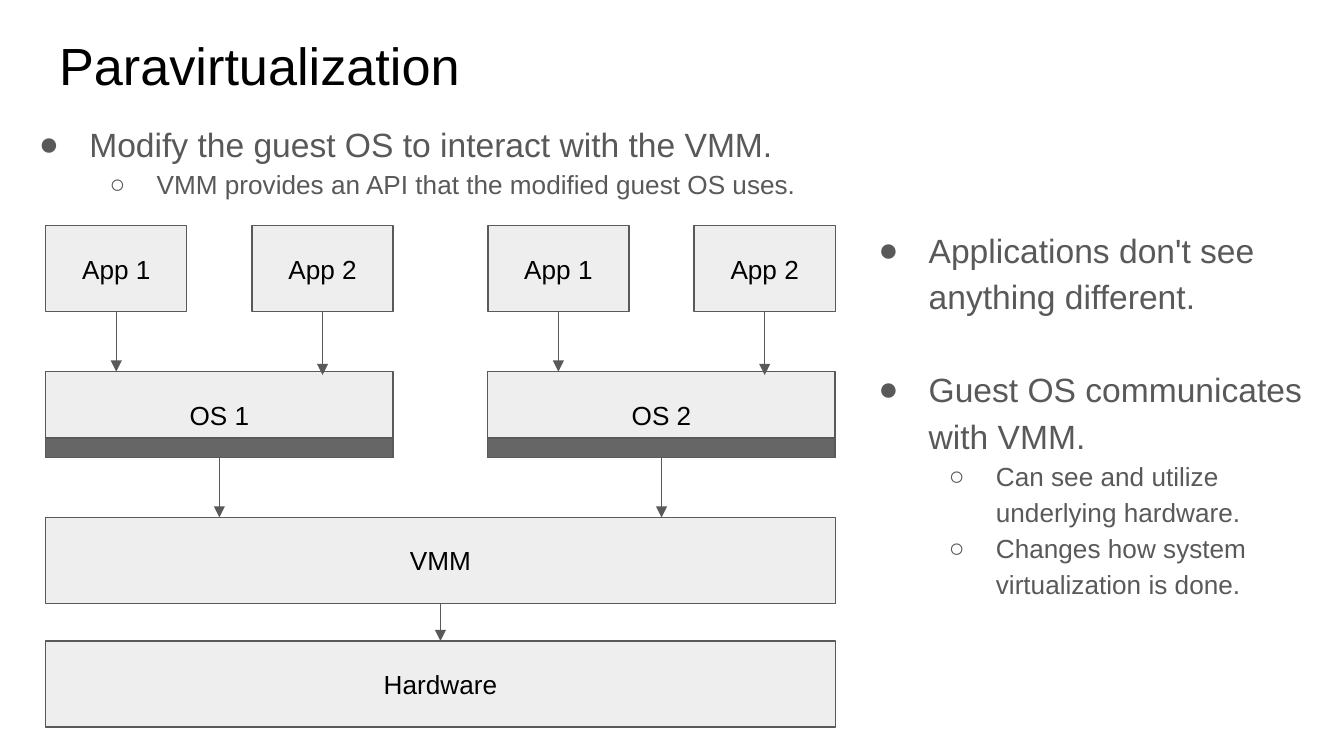
import pptx
import pptx.util
import pptx.dml.color
import pptx.enum.shapes
import pptx.enum.text
import pptx.oxml.ns
import lxml.etree

PX = 4572
BLACK = pptx.dml.color.RGBColor(0x00, 0x00, 0x00)
GREY = pptx.dml.color.RGBColor(0x59, 0x59, 0x59)
LIGHT = pptx.dml.color.RGBColor(0xEE, 0xEE, 0xEE)
DARK = pptx.dml.color.RGBColor(0x66, 0x66, 0x66)
WHITE = pptx.dml.color.RGBColor(0xFF, 0xFF, 0xFF)
ROW_H = 128
LEVELS = [
    {"size": 18, "left": 100, "indent": -75, "bullet": "●"},
    {"size": 14, "left": 200, "indent": -70, "bullet": "○"},
]


def px(n):
    return pptx.util.Emu(round(n * PX))


def apply(obj, values):
    for name, value in values.items():
        setattr(obj, name, value)


def add_xml(parent, tag, **attrs):
    el = lxml.etree.SubElement(parent, pptx.oxml.ns.qn(tag))
    for name, value in attrs.items():
        el.set(name, str(value))
    return el


def place(sp, box):
    apply(sp, dict(zip(("left", "top", "width", "height"), map(px, box))))


def format_frame(tf, anchor):
    apply(tf, {
        "word_wrap": True, "vertical_anchor": anchor,
        "auto_size": pptx.enum.text.MSO_AUTO_SIZE.NONE,
        "margin_left": px(20), "margin_right": px(20),
        "margin_top": px(20), "margin_bottom": px(20),
    })


def add_run(p, text, size, color):
    r = p.add_run()
    r.text = text
    apply(r.font, {"name": "Arial", "size": pptx.util.Pt(size)})
    r.font.color.rgb = color


def title(sp, box, text):
    place(sp, box)
    tf = sp.text_frame
    format_frame(tf, pptx.enum.text.MSO_ANCHOR.TOP)
    p = tf.paragraphs[0]
    p.alignment = pptx.enum.text.PP_ALIGN.LEFT
    add_run(p, text, 28, BLACK)


def bullet_list(sp, box, items):
    place(sp, box)
    tf = sp.text_frame
    format_frame(tf, pptx.enum.text.MSO_ANCHOR.TOP)
    for i, (level, before, text) in enumerate(items):
        p = tf.add_paragraph() if i else tf.paragraphs[0]
        style = LEVELS[level]
        apply(p, {"level": level, "line_spacing": 1.15,
                  "space_before": pptx.util.Pt(before),
                  "space_after": pptx.util.Pt(0)})
        add_run(p, text, style["size"], GREY)
        pPr = p._p.get_or_add_pPr()
        pPr.set("marL", str(px(style["left"])))
        pPr.set("indent", str(px(style["indent"])))
        add_xml(add_xml(pPr, "a:buClr"), "a:srgbClr", val=GREY)
        add_xml(pPr, "a:buFont", typeface="Arial")
        add_xml(pPr, "a:buChar", char=style["bullet"])


def block(s, box, text="", fill=LIGHT):
    sp = s.shapes.add_shape(pptx.enum.shapes.MSO_SHAPE.RECTANGLE, *map(px, box))
    sp.shadow.inherit = False
    sp.fill.solid()
    sp.fill.fore_color.rgb = fill
    sp.line.color.rgb = GREY
    sp.line.width = pptx.util.Pt(0.75)
    if text:
        format_frame(sp.text_frame, pptx.enum.text.MSO_ANCHOR.MIDDLE)
        p = sp.text_frame.paragraphs[0]
        p.alignment = pptx.enum.text.PP_ALIGN.CENTER
        add_run(p, text, 14, BLACK)


def arrow(s, x, top, bottom):
    c = s.shapes.add_connector(pptx.enum.shapes.MSO_CONNECTOR.STRAIGHT,
                               px(x), px(top), px(x), px(bottom))
    c.line.color.rgb = GREY
    c.line.width = pptx.util.Pt(0.75)
    add_xml(c.line._get_or_add_ln(), "a:tailEnd", type="triangle")
    add_xml(c._element.spPr, "a:effectLst")


def guest(s, box, os_name):
    x, y, w, h = box
    app_w, band_h = 210, 29
    os_top = y + 217
    os_bottom = os_top + ROW_H
    block(s, (x, os_top, w, ROW_H), os_name)
    block(s, (x, os_bottom - band_h, w, band_h), fill=DARK)
    for name, left, overlap in (("App 1", x, 0), ("App 2", x + w - app_w, 5)):
        block(s, (left, y, app_w, ROW_H), name)
        arrow(s, left + app_w / 2, y + ROW_H, os_top + overlap)
    arrow(s, x + w / 2, os_bottom, y + h)


def stack(s, box):
    x, y, w, h = box
    guest_w, guest_h = 517, 434
    hardware_top = y + h - ROW_H
    vmm_top = y + guest_h
    block(s, (x, vmm_top, w, ROW_H), "VMM")
    block(s, (x, hardware_top, w, ROW_H), "Hardware")
    arrow(s, x + w / 2, vmm_top + ROW_H, hardware_top)
    for left, name in ((x, "OS 1"), (x + w - guest_w, "OS 2")):
        guest(s, (left, y, guest_w, guest_h), name)


def main():
    prs = pptx.Presentation()
    apply(prs, {"slide_width": px(2000), "slide_height": px(1125)})
    s = prs.slides.add_slide(prs.slide_layouts[3])
    s.background.fill.solid()
    s.background.fill.fore_color.rgb = WHITE
    title(s.shapes.title, (68, 30, 1864, 126), "Paravirtualization")
    bullet_list(s.placeholders[1], (13, 155, 1942, 172), [
        (0, 0, "Modify the guest OS to interact with the VMM."),
        (1, 0, "VMM provides an API that the modified guest OS uses."),
    ])
    stack(s, (68, 336, 1175, 746))
    bullet_list(s.placeholders[2], (1262, 313, 714, 732), [
        (0, 0, "Applications don't see anything different."),
        (0, 25, "Guest OS communicates with VMM."),
        (1, 0, "Can see and utilize underlying hardware."),
        (1, 0, "Changes how system virtualization is done."),
    ])
    prs.save("out.pptx")


if __name__ == "__main__":
    main()
